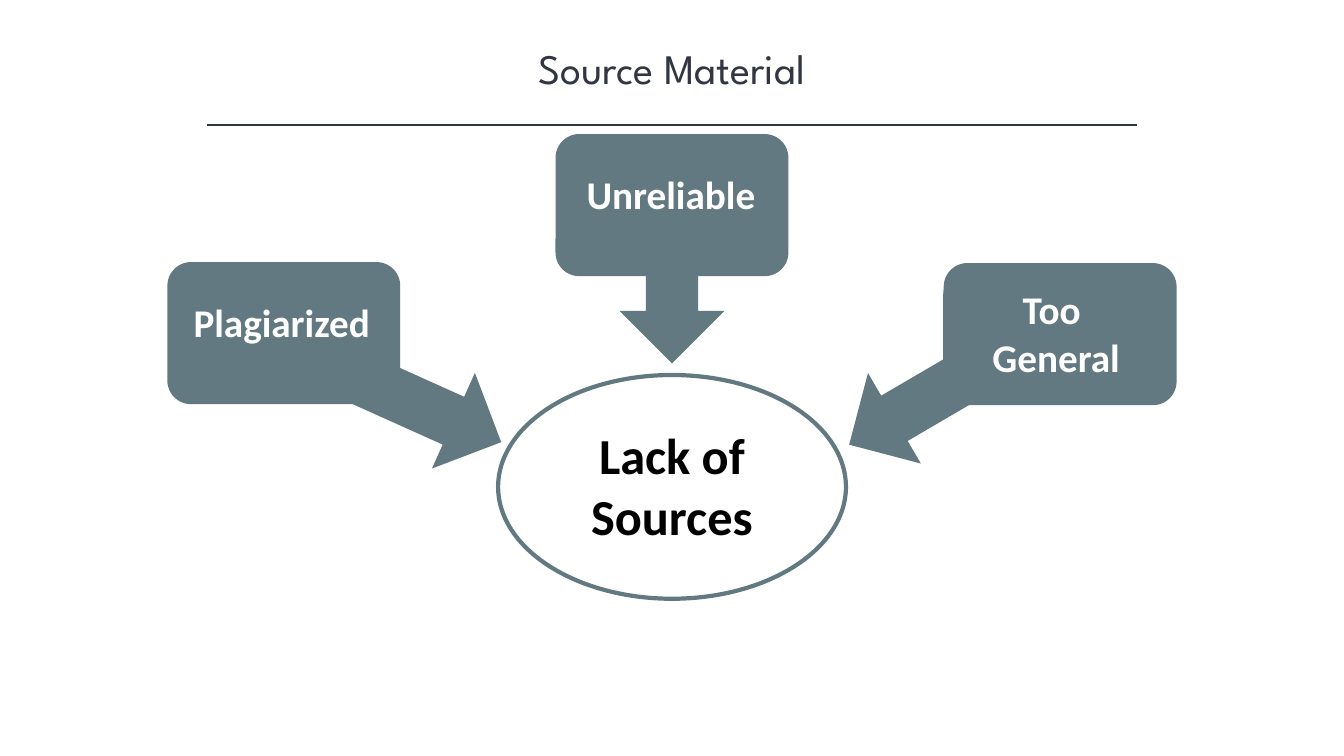
import pptx
import pptx.util
import pptx.dml.color
import pptx.enum.shapes
import pptx.enum.text
from lxml import etree

TITLE = "Source Material"
PROBLEM = "Lack of Sources"
# label lines, column from centre, box top, label (shift, top, height), arrow (left, top, angle)
CAUSES = [
    (["Plagiarized"], -1, 2.60, (-0.02, 2.88, 0.53), (3.26, 3.50, 24.2)),
    (["Unreliable"], 0, 1.33, (-0.01, 1.61, 0.63), (5.77, 2.19, 90)),
    (["Too ", "General"], 1, 2.61, (-0.04, 2.73, 1.15), (8.30, 3.44, 149.7)),
]
COLORS = {"slate": "627981", "ink": "323542", "white": "FFFFFF", "black": "000000"}

WIDTH, HEIGHT = 13.33, 7.5
CENTER = WIDTH / 2
COLUMN = 3.85
BOX_W, BOX_H = 2.31, 1.41
LABEL_W = 2.24
ARROW_W, ARROW_H = 1.79, 1.04
RULE_W, RULE_Y = 9.22, 1.24

inches = pptx.util.Inches
SHAPES = pptx.enum.shapes.MSO_SHAPE


def rgb(name):
    return pptx.dml.color.RGBColor.from_string(COLORS[name])


def add_block(slide, kind, left, top, width, height, fill="slate"):
    """Add a flat preset shape; with no fill it gets a slate outline instead."""
    block = slide.shapes.add_shape(
        kind, inches(left), inches(top), inches(width), inches(height))
    block.shadow.inherit = False
    if fill:
        block.fill.solid()
        block.fill.fore_color.rgb = rgb(fill)
        block.line.fill.background()
    else:
        block.fill.background()
        block.line.color.rgb = rgb("slate")
        block.line.width = pptx.util.Pt(3)
    return block


def write(holder, lines, size, font, color, bold=False):
    frame = holder.text_frame
    frame.word_wrap = True
    frame.vertical_anchor = pptx.enum.text.MSO_ANCHOR.TOP
    for index, line in enumerate(lines):
        paragraph = frame.add_paragraph() if index else frame.paragraphs[0]
        paragraph.alignment = pptx.enum.text.PP_ALIGN.CENTER
        run = paragraph.add_run()
        run.text = line
        run.font.size = pptx.util.Pt(size)
        run.font.name = font
        run.font.bold = bold
        run.font.color.rgb = rgb(color)


def add_text(slide, left, top, width, height, *style):
    holder = slide.shapes.add_textbox(
        inches(left), inches(top), inches(width), inches(height))
    write(holder, *style)


def add_heading(slide):
    add_text(slide, CENTER - 5, 0.37, 10, 0.61, [TITLE], 30, "League Spartan", "ink")
    rule = slide.shapes.add_connector(
        pptx.enum.shapes.MSO_CONNECTOR.STRAIGHT,
        inches(CENTER - RULE_W / 2), inches(RULE_Y),
        inches(CENTER + RULE_W / 2), inches(RULE_Y))
    rule.line.color.rgb = rgb("ink")
    rule.line.width = pptx.util.Pt(1)
    etree.SubElement(rule.element.spPr, pptx.oxml.ns.qn("a:effectLst"))


def main():
    deck = pptx.Presentation()
    deck.slide_width, deck.slide_height = inches(WIDTH), inches(HEIGHT)
    slide = deck.slides.add_slide(deck.slide_layouts[6])

    for *_, (left, top, angle) in reversed(CAUSES):
        arrow = add_block(slide, SHAPES.RIGHT_ARROW, left, top, ARROW_W, ARROW_H)
        arrow.rotation = angle

    add_heading(slide)

    for lines, column, box_top, (shift, label_top, label_h), _ in CAUSES:
        middle = CENTER + column * COLUMN
        add_block(slide, SHAPES.ROUNDED_RECTANGLE,
                  middle - BOX_W / 2, box_top, BOX_W, BOX_H)
        label = add_block(slide, SHAPES.ROUNDED_RECTANGLE,
                          middle + shift - LABEL_W / 2, label_top, LABEL_W, label_h)
        write(label, lines, 28, "Calibri", "white", True)

    add_block(slide, SHAPES.OVAL, CENTER - 3.45 / 2, 3.72, 3.45, 2.22, fill=None)
    add_text(slide, CENTER - 0.92, 4.16, 1.84, 1.31,
             [PROBLEM], 36, "Calibri", "black", True)

    deck.save("out.pptx")


if __name__ == "__main__":
    main()
